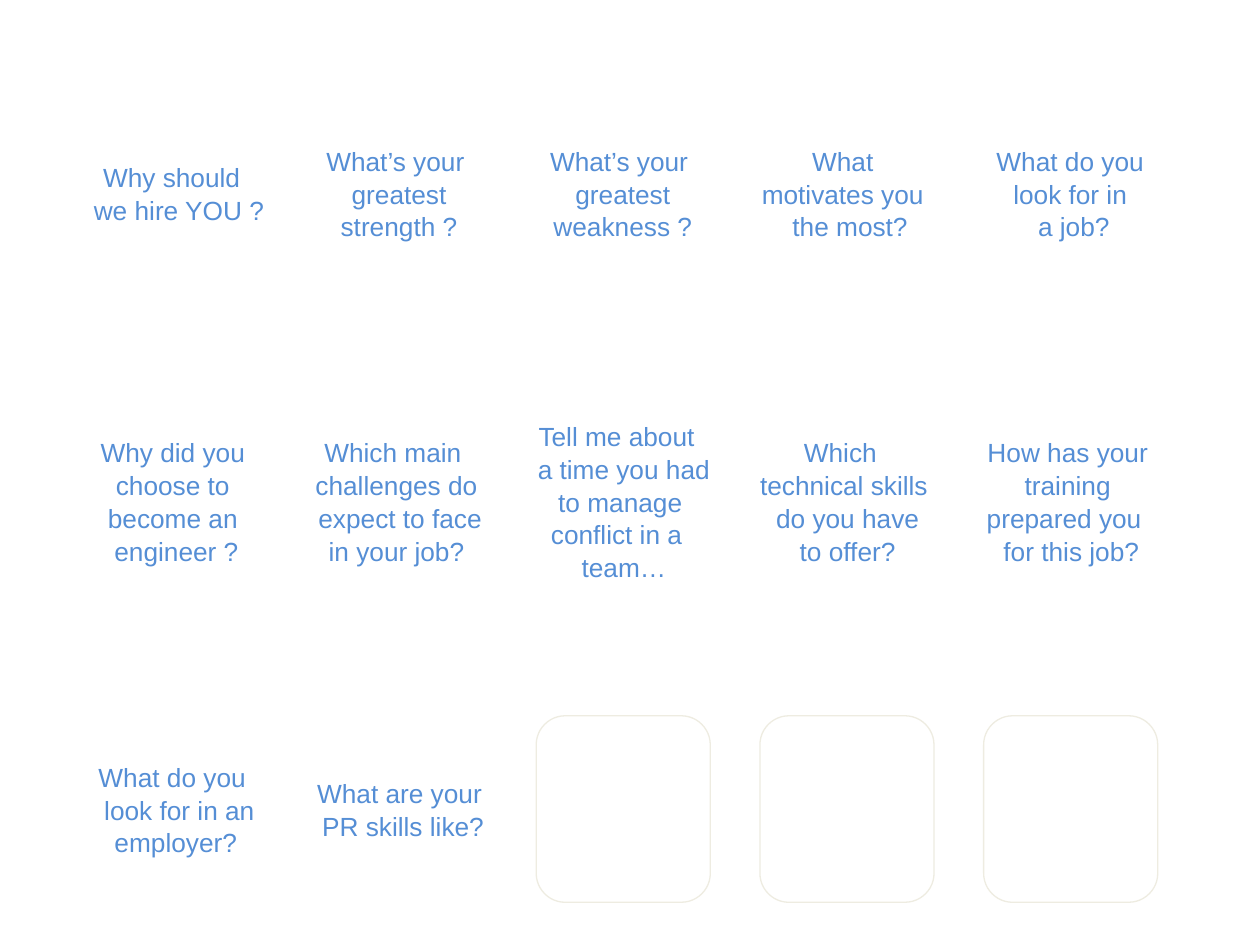
from pptx import Presentation
from pptx.dml.color import RGBColor
from pptx.enum.shapes import MSO_SHAPE
from pptx.enum.text import MSO_ANCHOR, PP_ALIGN
from pptx.util import Cm, Pt

ROUND = MSO_SHAPE.ROUNDED_RECTANGLE
MIDDLE = MSO_ANCHOR.MIDDLE
CENTER = PP_ALIGN.CENTER

WHITE, BLUE, CREAM = "FFFFFF", "558ED5", "EEECE1"
WIDE, HIGH = 3.51, 3.76        # card size, cm
STEP_X, STEP_Y = 4.51, 6.21    # grid pitch, cm
TOP = 2.01
INSETS = (1.78, 1.73, 1.79)    # left edge of each row, cm

# One list per row; an empty card is left for a new question
ROWS = [
    ["Why should \n we hire YOU ?",
     "What’s your \ngreatest\nstrength ?",
     "What’s your \ngreatest\nweakness ?",
     "What \nmotivates you \n the most?",
     "What do you\n look for in \n a job?"],
    ["Why did you\n choose to \n become an \n engineer ?",
     "Which main \n challenges do \n expect to face\nin your job?",
     "Tell me about \n a time you had\n to manage \nconflict in a \n team…",
     "Which \ntechnical skills\n do you have\n to offer?",
     "How has your\n training \nprepared you \n for this job?"],
    ["What do you \n look for in an\nemployer?",
     "What are your\n PR skills like?",
     "", "", ""],
]


def color(code):
    return RGBColor.from_string(code)


def write(frame, text):
    frame.word_wrap = False
    frame.vertical_anchor = MIDDLE
    frame.text = text
    for line in frame.paragraphs:
        line.alignment = CENTER
        line.line_spacing = 1.04
        line.font.name = "Arial"
        line.font.size = Pt(15)
        line.font.color.rgb = color(BLUE)


def add_card(slide, left, top, text):
    card = slide.shapes.add_shape(ROUND, Cm(left), Cm(top), Cm(WIDE), Cm(HIGH))
    card.shadow.inherit = False
    card.fill.solid()
    card.fill.fore_color.rgb = color(WHITE)
    if text:
        card.line.fill.background()
        write(card.text_frame, text)
    else:
        card.line.color.rgb = color(CREAM)
        card.line.width = Pt(0.75)


def add_row(slide, left, top, texts):
    for col, text in enumerate(texts):
        add_card(slide, left + col * STEP_X, top, text)


def main():
    deck = Presentation()
    deck.slide_width, deck.slide_height = Cm(25.4), Cm(19.05)
    slide = deck.slides.add_slide(deck.slide_layouts[6])

    # Question cards, row by row
    for row, (left, texts) in enumerate(zip(INSETS, ROWS)):
        add_row(slide, left, TOP + row * STEP_Y, texts)

    deck.save("out.pptx")


if __name__ == "__main__":
    main()
